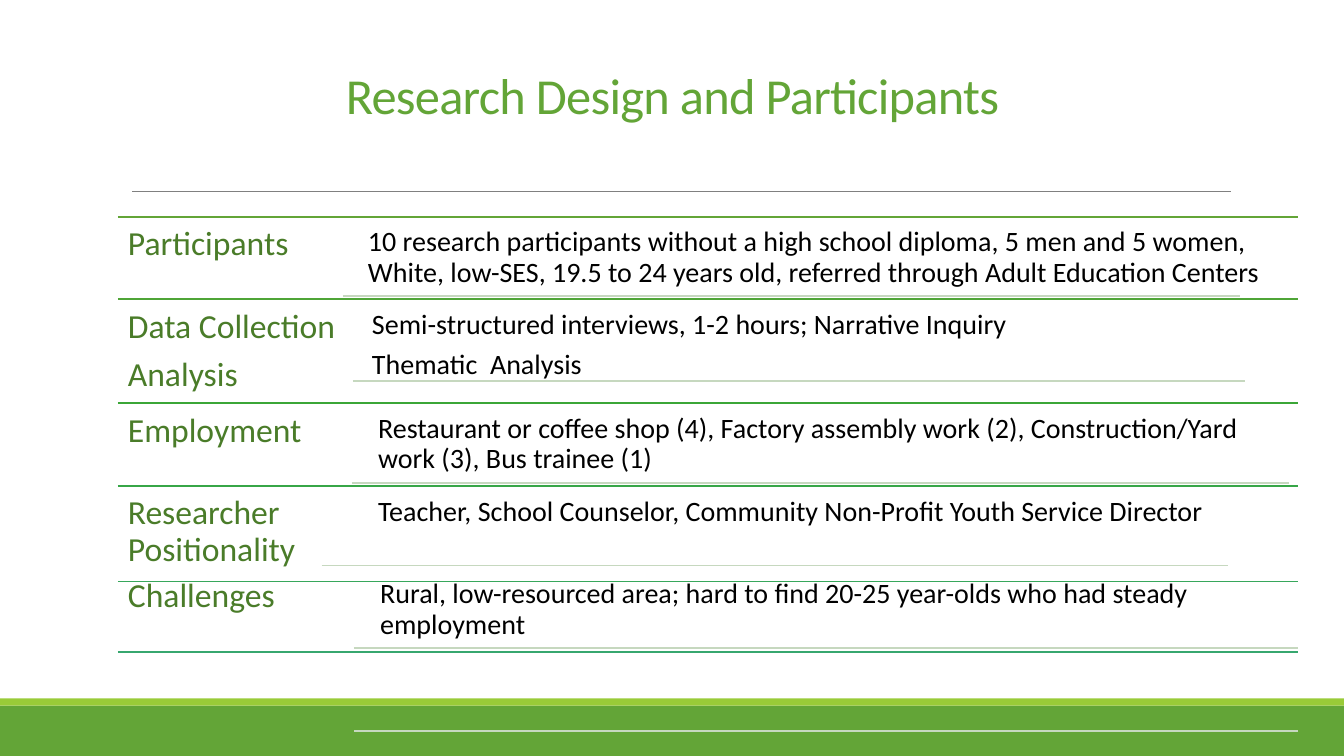
from dataclasses import dataclass

from lxml import etree
from pptx import Presentation
from pptx.dml.color import RGBColor
from pptx.enum.shapes import MSO_CONNECTOR, MSO_SHAPE
from pptx.enum.text import MSO_ANCHOR, PP_ALIGN
from pptx.oxml.ns import qn
from pptx.util import Inches, Pt


@dataclass(frozen=True)
class Theme:
    font: str = "Calibri"
    green: str = "63A537"
    lime: str = "99CB38"
    label: str = "4A7C29"
    detail: str = "000000"
    title_rule: str = "808080"
    underline: str = "C6D8BF"
    title_size: int = 36
    label_size: int = 24
    detail_size: int = 20
    thin: float = 0.5
    medium: float = 1.25


@dataclass(frozen=True)
class Row:
    labels: tuple
    details: tuple
    rule_top: float
    rule_color: str
    label_top: float
    label_width: float
    detail_left: float
    underline: tuple


TITLE = "Research Design and Participants"
ROWS = [
    Row(("Participants",),
        ("10 research participants without a high school diploma, 5 men and 5 women, "
         "White, low-SES, 19.5 to 24 years old, referred through Adult Education Centers",),
        2.15, "63A537", 2.15, 2.22, 3.57, (3.4, 12.3, 2.94)),
    Row(("Data Collection", "Analysis"),
        ("Semi-structured interviews, 1-2 hours; Narrative Inquiry", "Thematic  Analysis"),
        2.97, "4FA537", 2.97, 2.32, 3.61, (3.5, 12.35, 3.78)),
    Row(("Employment",),
        ("Restaurant or coffee shop (4), Factory assembly work (2), "
         "Construction/Yard work (3), Bus trainee (1)",),
        4.0, "3BA637", 4.0, 2.32, 3.67, (3.49, 12.78, 4.79)),
    Row(("Researcher Positionality",),
        ("Teacher, School Counselor, Community Non-Profit Youth Service Director",),
        4.82, "37A647", 4.82, 2.01, 3.67, (3.19, 12.18, 5.61)),
    Row(("Challenges",),
        ("Rural, low-resourced area; hard to find 20-25 year-olds who had steady employment",),
        5.77, "37A75B", 5.64, 2.34, 3.69, (3.51, 12.87, 6.43)),
]
CLOSING_RULE = (6.47, "37A76F")
FOOTER_RULE = (3.51, 12.87, 7.25)
FOOTER_BANDS = [(7.0, 0.5, "green"), (6.93, 0.07, "lime")]
SLIDE_WIDTH, SLIDE_HEIGHT = 13.33, 7.5
LEFT, RIGHT = 1.17, 12.87
LABEL_INSET, DETAIL_INSET, DETAIL_DROP = 0.1, 0.08, 0.03
TEXT_HEIGHT = 0.8
LINE_SPACING, PARAGRAPH_GAP = 0.9, 0.35

theme = Theme()


def add_rule(slide, left, right, top, color, weight=theme.medium):
    rule = slide.shapes.add_connector(
        MSO_CONNECTOR.STRAIGHT, Inches(left), Inches(top), Inches(right), Inches(top))
    rule.line.color.rgb = RGBColor.from_string(color)
    rule.line.width = Pt(weight)
    etree.SubElement(rule._element.spPr, qn("a:effectLst"))


def add_band(slide, top, height, color):
    band = slide.shapes.add_shape(
        MSO_SHAPE.RECTANGLE, 0, Inches(top), Inches(SLIDE_WIDTH), Inches(height))
    band.shadow.inherit = False
    band.fill.solid()
    band.fill.fore_color.rgb = RGBColor.from_string(color)
    band.line.fill.background()


def add_text(slide, box, lines, size, color, inset, spacing=LINE_SPACING):
    frame = slide.shapes.add_textbox(*map(Inches, box)).text_frame
    frame.word_wrap = True
    frame.margin_left = frame.margin_right = Inches(inset)
    frame.margin_top = frame.margin_bottom = Inches(inset)
    for index, line in enumerate(lines):
        paragraph = frame.add_paragraph() if index else frame.paragraphs[0]
        paragraph.line_spacing = spacing
        paragraph.space_after = Pt(size * PARAGRAPH_GAP)
        run = paragraph.add_run()
        run.text = line
        run.font.name = theme.font
        run.font.size = Pt(size)
        run.font.color.rgb = RGBColor.from_string(color)
    return frame


def add_title(slide):
    title = add_text(slide, (LEFT, 0.29, 11, 1), [TITLE],
                     theme.title_size, theme.green, 0.05, 0.85)
    title.vertical_anchor = MSO_ANCHOR.BOTTOM
    heading = title.paragraphs[0]
    heading.alignment = PP_ALIGN.CENTER
    heading.space_after = Pt(0)
    heading.runs[0].font._element.set("spc", "-50")


def add_row(slide, row):
    add_rule(slide, LEFT, RIGHT, row.rule_top, row.rule_color)
    add_text(slide, (LEFT, row.label_top, row.label_width, TEXT_HEIGHT),
             row.labels, theme.label_size, theme.label, LABEL_INSET)
    add_text(slide, (row.detail_left, row.label_top + DETAIL_DROP,
                     RIGHT - row.detail_left, TEXT_HEIGHT),
             row.details, theme.detail_size, theme.detail, DETAIL_INSET)
    add_rule(slide, *row.underline, theme.underline)


def main():
    deck = Presentation()
    deck.slide_width, deck.slide_height = Inches(SLIDE_WIDTH), Inches(SLIDE_HEIGHT)
    slide = deck.slides.add_slide(deck.slide_layouts[6])
    for top, height, color in FOOTER_BANDS:
        add_band(slide, top, height, getattr(theme, color))
    add_rule(slide, 1.31, 12.21, 1.9, theme.title_rule, theme.thin)
    add_title(slide)
    for row in ROWS:
        add_row(slide, row)
    add_rule(slide, LEFT, RIGHT, *CLOSING_RULE)
    add_rule(slide, *FOOTER_RULE, theme.underline)
    deck.save("out.pptx")


if __name__ == "__main__":
    main()
